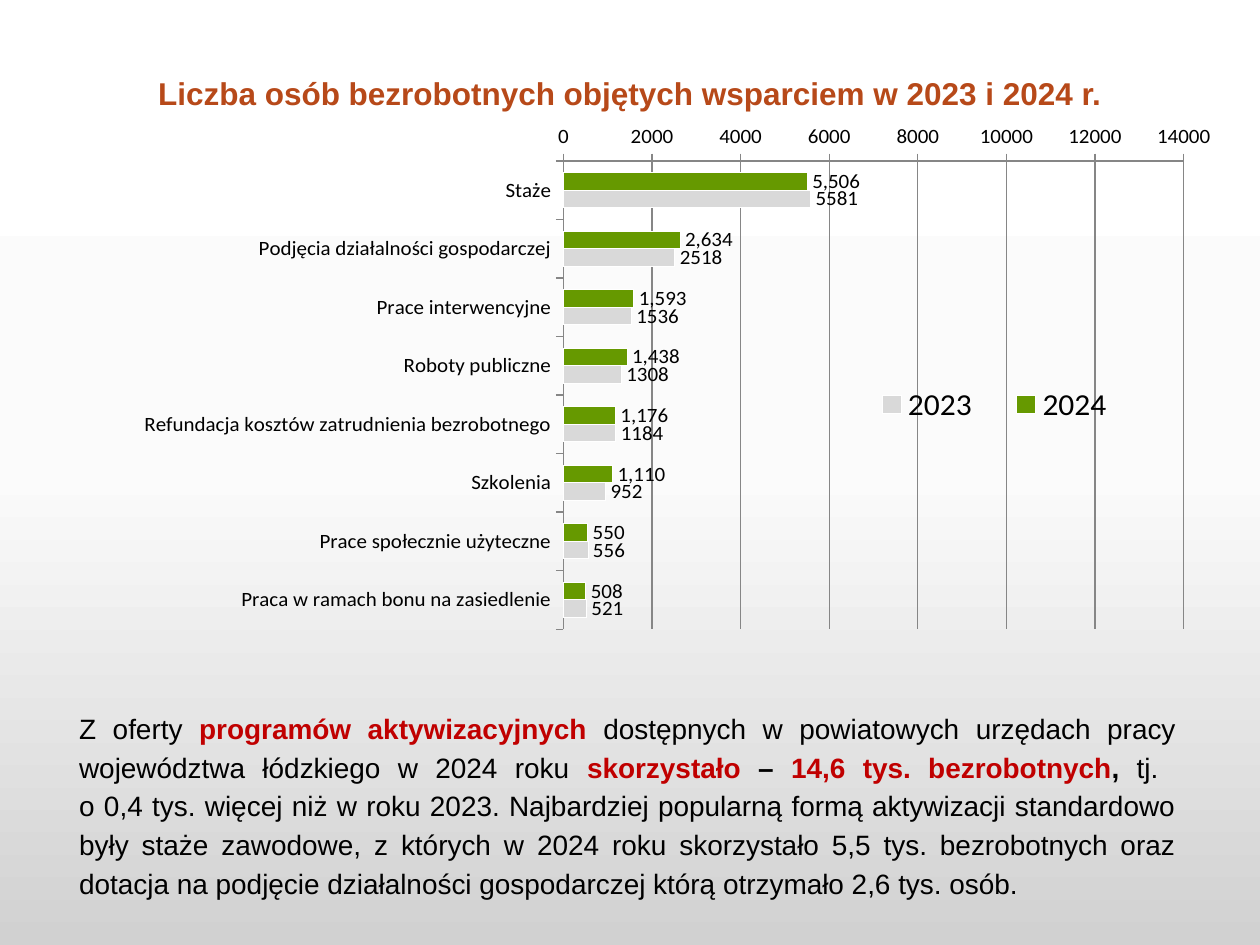
from copy import deepcopy

from lxml import etree
from pptx import Presentation
from pptx.chart import data
from pptx.dml import color
from pptx.enum import chart as ch, text
from pptx.oxml import ns
from pptx.util import Inches, Pt

HUES = {"title": "B74919", "text": "000000", "key": "C00000", "green": "669900",
        "grey": "D9D9D9", "line": "868686", "white": "FFFFFF"}
BACK = [(0, "FFFFFF"), (0.5, "FBFBFB"), (1, "D1D1D1")]

CATS = ["Staże", "Podjęcia działalności gospodarczej", "Prace interwencyjne",
        "Roboty publiczne", "Refundacja kosztów zatrudnienia bezrobotnego",
        "Szkolenia", "Prace społecznie użyteczne",
        "Praca w ramach bonu na zasiedlenie"]
# name, values, fill, label format
ROWS = [("2024", [5506, 2634, 1593, 1438, 1176, 1110, 550, 508], "green", "#,##0"),
        ("2023", [5581, 2518, 1536, 1308, 1184, 952, 556, 521], "grey", "0")]

# text, colour, bold
BODY = [("Z oferty ", "text", False),
        ("programów aktywizacyjnych ", "key", True),
        ("dostępnych w powiatowych urzędach pracy województwa łódzkiego "
         "w 2024 roku ", "text", False),
        ("skorzystało", "key", True), (" – ", "text", True),
        ("14,6 tys. bezrobotnych", "key", True), (", ", "text", True),
        ("tj. ", "text", False), None,
        ("o 0,4 tys. więcej niż w roku 2023. Najbardziej popularną formą "
         "aktywizacji standardowo były staże zawodowe, z których w 2024 roku "
         "skorzystało 5,5 tys. bezrobotnych oraz dotacja na podjęcie działalności "
         "gospodarczej którą otrzymało 2,6 tys. osób.", "text", False)]


class Deck:
    def __init__(self):
        self.prs = Presentation()
        self.prs.slide_width, self.prs.slide_height = Inches(10), Inches(7.5)
        self.slide = self.prs.slides.add_slide(self.prs.slide_layouts[5])

    def rgb(self, name):
        return color.RGBColor.from_string(HUES[name])

    def style(self, font, size, hue="text", bold=False, face="Arial"):
        font.name, font.size, font.bold = face, Pt(size), bold
        font.color.rgb = self.rgb(hue)

    def back(self, stops):
        fill = self.slide.background.fill
        fill.gradient()
        fill.gradient_angle = 270
        first = self.slide.element.find(".//" + ns.qn("a:gs"))
        first.addnext(deepcopy(first))
        for stop, (pos, hue) in zip(fill.gradient_stops, stops):
            stop.position = pos
            stop.color.rgb = color.RGBColor.from_string(hue)

    def title(self, words, box):
        shape = self.slide.shapes.title
        shape.left, shape.top, shape.width, shape.height = map(Inches, box)
        frame = shape.text_frame
        frame.text = words
        frame.vertical_anchor = text.MSO_ANCHOR.MIDDLE
        para = frame.paragraphs[0]
        para.alignment, para.line_spacing = text.PP_ALIGN.CENTER, 0.9
        self.style(para.runs[0].font, 18, "title", True)

    def body(self, parts, box):
        frame = self.slide.shapes.add_textbox(*map(Inches, box)).text_frame
        frame.word_wrap = True
        frame.auto_size = text.MSO_AUTO_SIZE.SHAPE_TO_FIT_TEXT
        para = frame.paragraphs[0]
        para.alignment = text.PP_ALIGN.JUSTIFY
        para.line_spacing, para.space_after = 1.15, Pt(12)
        for part in parts:
            if part is None:
                para.add_line_break()
                continue
            run = para.add_run()
            run.text = part[0]
            self.style(run.font, 16, *part[1:])

    def place(self, host, box, after=None, inner=False):
        """Fix a chart part at fractions of the chart area."""
        for old in host.findall(ns.qn("c:layout")):
            host.remove(old)
        outer = etree.Element(ns.qn("c:layout"))
        lay = etree.SubElement(outer, ns.qn("c:manualLayout"))
        items = [("layoutTarget", "inner")] if inner else []
        items += [("xMode", "edge"), ("yMode", "edge"), *zip("xywh", box)]
        for tag, val in items:
            etree.SubElement(lay, ns.qn("c:" + tag)).set("val", str(val))
        if after is None:
            host.insert(0, outer)
        else:
            after.addnext(outer)

    def axis(self, axis):
        axis.major_tick_mark = ch.XL_TICK_MARK.OUTSIDE
        axis.minor_tick_mark = ch.XL_TICK_MARK.NONE
        axis.format.line.color.rgb = self.rgb("line")
        self.style(axis.tick_labels.font, 12, face="Calibri")

    def bars(self, cats, rows, box):
        source = data.CategoryChartData()
        source.categories = cats
        for name, vals, *_ in rows:
            source.add_series(name, vals)
        chart = self.slide.shapes.add_chart(
            ch.XL_CHART_TYPE.BAR_CLUSTERED, *map(Inches, box), source).chart
        chart.has_title = False
        self.style(chart.font, 18, face="Calibri")

        # Axes
        cat, val = chart.category_axis, chart.value_axis
        self.axis(cat)
        self.axis(val)
        cat.reverse_order = True
        cat.crosses = ch.XL_AXIS_CROSSES.MAXIMUM
        val.minimum_scale, val.maximum_scale, val.major_unit = 0, 14000, 2000
        val.has_major_gridlines = True
        val.major_gridlines.format.line.color.rgb = self.rgb("line")
        val.tick_labels.number_format = "0"
        val.tick_labels.number_format_is_linked = False

        # Bars and their values
        plot = chart.plots[0]
        plot.gap_width, plot.overlap, plot.vary_by_categories = 133, 0, False
        for bar, (_, _, hue, form) in zip(plot.series, rows):
            bar.format.fill.solid()
            bar.format.fill.fore_color.rgb = self.rgb(hue)
            bar.format.line.color.rgb = self.rgb("white")
            tags = bar.data_labels
            tags.show_value = True
            tags.number_format, tags.number_format_is_linked = form, False
            tags.position = ch.XL_LABEL_POSITION.OUTSIDE_END
            self.style(tags.font, 12, face="Calibri")

        # Legend and plot area
        chart.has_legend = True
        key = chart.legend
        key.position, key.include_in_layout = ch.XL_LEGEND_POSITION.TOP, False
        self.style(key.font, 18, face="Calibri")
        root = chart.element
        self.place(root.find(".//" + ns.qn("c:legend")), (0.68, 0.45, 0.24, 0.09),
                   after=root.find(".//" + ns.qn("c:legendPos")))
        self.place(root.find(".//" + ns.qn("c:plotArea")),
                   (0.447, 0.035, 0.508, 0.885), inner=True)


def main():
    deck = Deck()
    deck.back(BACK)
    deck.title("Liczba osób bezrobotnych objętych wsparciem w 2023 i 2024 r.",
               (0, 0.36, 10, 0.79))
    deck.bars(CATS, ROWS, (0.14, 0.99, 9.69, 4.34))
    deck.body(BODY, (0.53, 5.56, 8.9, 1.65))
    deck.prs.save("out.pptx")


if __name__ == "__main__":
    main()
